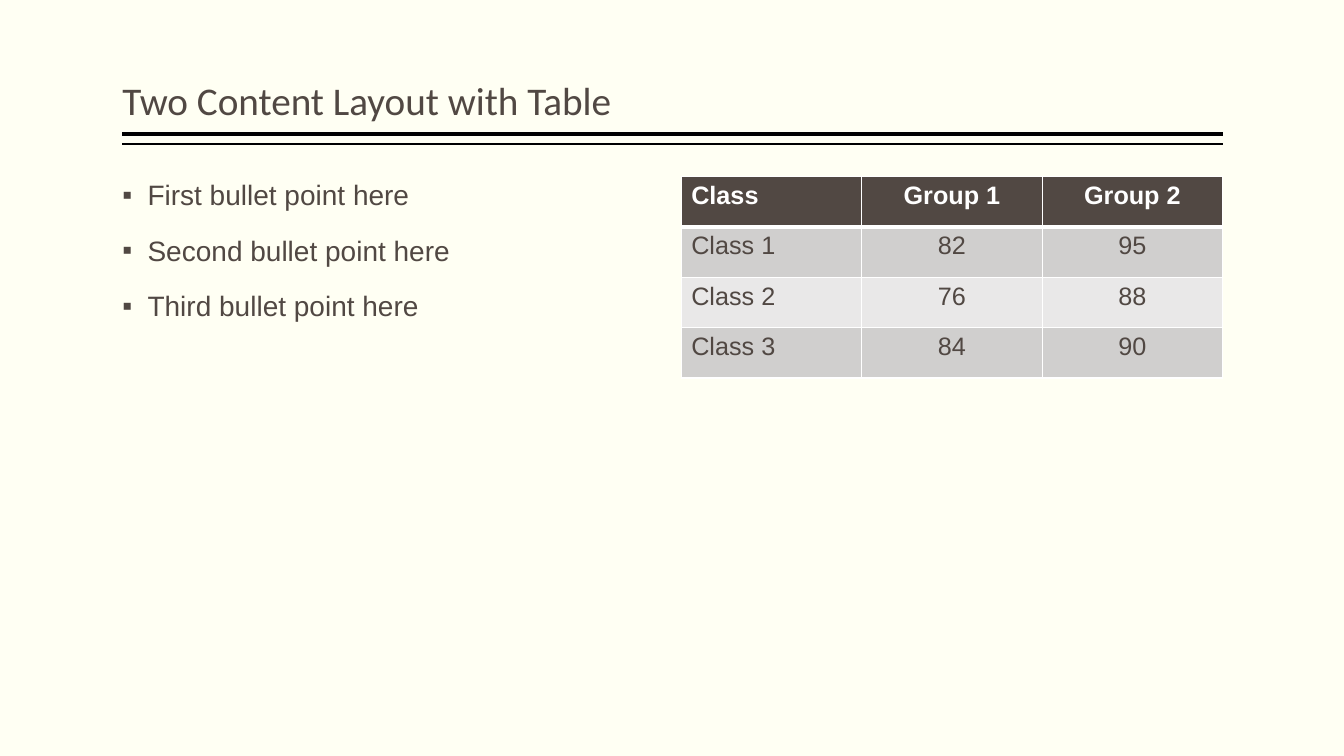
"""Build a two-content slide with a bullet list and a table of class scores."""
import dataclasses
import typing

import lxml.etree
import pptx
import pptx.dml.color
import pptx.enum.shapes
import pptx.enum.text
import pptx.oxml.ns
import pptx.util

Pt = pptx.util.Pt
RGBColor = pptx.dml.color.RGBColor
Align = pptx.enum.text.PP_ALIGN
qn = pptx.oxml.ns.qn

IVORY = RGBColor(0xFF, 0xFF, 0xF3)
BROWN = RGBColor(0x51, 0x48, 0x43)
BLACK = RGBColor(0, 0, 0)
WHITE = RGBColor(0xFF, 0xFF, 0xFF)
DARK_BAND = RGBColor(0xD0, 0xCF, 0xCE)
LIGHT_BAND = RGBColor(0xE9, 0xE8, 0xE8)

LEFT, RIGHT = 87.4, 873.4
CONTENT_TOP, CONTENT_WIDTH = 126, 386.8
ROW_HEIGHT = 36
THIN_BORDER, HEADER_BORDER = 0.96, 3

POINTS = ["First bullet point here", "Second bullet point here", "Third bullet point here"]
SCORES = [
    ["Class", "Group 1", "Group 2"],
    ["Class 1", "82", "95"],
    ["Class 2", "76", "88"],
    ["Class 3", "84", "90"],
]


@dataclasses.dataclass
class Rule:
    top: float
    weight: float


@dataclasses.dataclass
class TextStyle:
    font: str
    size: float
    color: RGBColor
    bold: bool = False


@dataclasses.dataclass
class RowStyle:
    fill: RGBColor
    text: TextStyle
    border_top: float = THIN_BORDER
    border_bottom: float = THIN_BORDER


RULES = [Rule(95.8, 3), Rule(103, 1)]
TITLE_STYLE = TextStyle("Calibri", 28, BROWN)
POINT_STYLE = TextStyle("Arial", 20, BROWN)
SCORE_STYLE = TextStyle("Arial", 18, BROWN)
ROW_STYLES = [
    RowStyle(BROWN, TextStyle("Arial", 18, WHITE, True), border_bottom=HEADER_BORDER),
    RowStyle(DARK_BAND, SCORE_STYLE, border_top=HEADER_BORDER),
    RowStyle(LIGHT_BAND, SCORE_STYLE),
    RowStyle(DARK_BAND, SCORE_STYLE),
]


def style_paragraph(paragraph: typing.Any, style: TextStyle, align: Align = Align.LEFT) -> None:
    paragraph.alignment = align
    for run in paragraph.runs:
        run.font.name = style.font
        run.font.size = Pt(style.size)
        run.font.bold = style.bold
        run.font.color.rgb = style.color


def fill_placeholder(holder: typing.Any, box: tuple, text: str, style: TextStyle,
                     anchor: pptx.enum.text.MSO_ANCHOR) -> None:
    holder.left, holder.top, holder.width, holder.height = map(Pt, box)
    frame = holder.text_frame
    frame.text = text
    frame.word_wrap = True
    frame.auto_size = pptx.enum.text.MSO_AUTO_SIZE.NONE
    frame.vertical_anchor = anchor
    frame.margin_left = frame.margin_right = Pt(0)
    frame.margin_top = frame.margin_bottom = Pt(3.6)
    for paragraph in frame.paragraphs:
        style_paragraph(paragraph, style)
        paragraph.line_spacing = 0.9


def add_bullet(paragraph: typing.Any) -> None:
    paragraph.space_before = Pt(18)
    properties = paragraph._p.get_or_add_pPr()
    properties.set("marL", str(Pt(18)))
    properties.set("indent", str(-Pt(18)))
    color = lxml.etree.SubElement(properties, qn("a:buClr"))
    lxml.etree.SubElement(color, qn("a:srgbClr"), val=str(BROWN))
    lxml.etree.SubElement(properties, qn("a:buFont"), typeface="Arial")
    lxml.etree.SubElement(properties, qn("a:buChar"), char="▪")


def draw_rule(slide: typing.Any, rule: Rule) -> None:
    line = slide.shapes.add_connector(
        pptx.enum.shapes.MSO_CONNECTOR.STRAIGHT, Pt(RIGHT), Pt(rule.top), Pt(LEFT), Pt(rule.top))
    line.line.color.rgb = BLACK
    line.line.width = Pt(rule.weight)
    lxml.etree.SubElement(line._element.spPr, qn("a:effectLst"))


def add_borders(cell: typing.Any, style: RowStyle) -> None:
    weights = {"L": THIN_BORDER, "R": THIN_BORDER, "T": style.border_top, "B": style.border_bottom}
    properties = cell._tc.get_or_add_tcPr()
    for side, weight in weights.items():
        border = lxml.etree.SubElement(properties, qn(f"a:ln{side}"), w=str(Pt(weight)))
        fill = lxml.etree.SubElement(border, qn("a:solidFill"))
        lxml.etree.SubElement(fill, qn("a:srgbClr"), val=str(WHITE))


def draw_scores(slide: typing.Any) -> None:
    scores = slide.shapes.add_table(
        len(SCORES), len(SCORES[0]), Pt(RIGHT - CONTENT_WIDTH), Pt(CONTENT_TOP),
        Pt(CONTENT_WIDTH), Pt(ROW_HEIGHT * len(SCORES))).table
    for row, values, style in zip(scores.rows, SCORES, ROW_STYLES):
        for column, (cell, value) in enumerate(zip(row.cells, values)):
            add_borders(cell, style)
            cell.fill.solid()
            cell.fill.fore_color.rgb = style.fill
            cell.text_frame.text = value
            align = Align.CENTER if column else Align.LEFT
            style_paragraph(cell.text_frame.paragraphs[0], style.text, align)


def main() -> None:
    deck = pptx.Presentation()
    deck.slide_width, deck.slide_height = Pt(960), Pt(540)
    slide = deck.slides.add_slide(deck.slide_layouts[1])
    slide.background.fill.solid()
    slide.background.fill.fore_color.rgb = IVORY

    for rule in RULES:
        draw_rule(slide, rule)
    fill_placeholder(slide.shapes.title, (LEFT, 5.8, RIGHT - LEFT, 86.4),
                     "Two Content Layout with Table", TITLE_STYLE,
                     pptx.enum.text.MSO_ANCHOR.BOTTOM)
    points = slide.placeholders[1]
    fill_placeholder(points, (LEFT, CONTENT_TOP, CONTENT_WIDTH, 360),
                     "\n".join(POINTS), POINT_STYLE, pptx.enum.text.MSO_ANCHOR.TOP)
    for paragraph in points.text_frame.paragraphs:
        add_bullet(paragraph)
    draw_scores(slide)
    deck.save("out.pptx")


if __name__ == "__main__":
    main()
